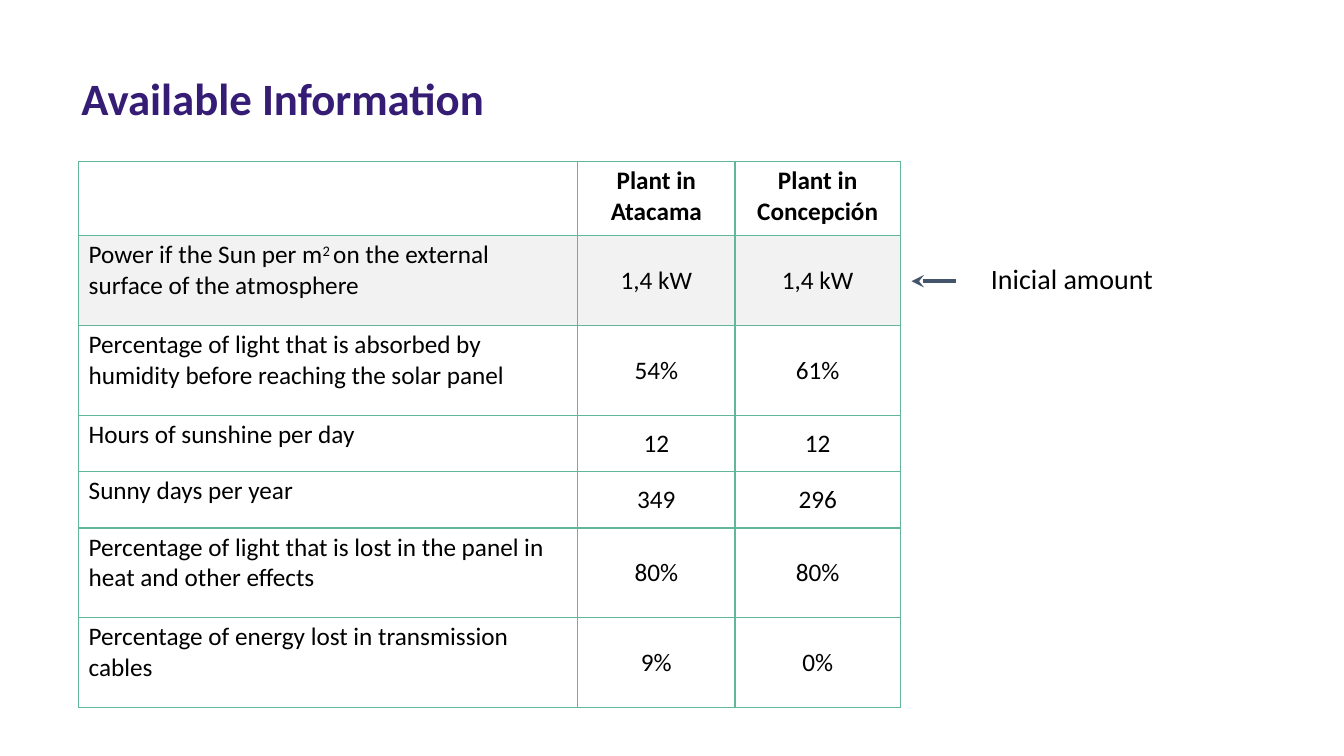
import lxml.etree
import pptx
import pptx.dml.color
import pptx.enum.shapes
import pptx.enum.text
import pptx.oxml.ns
import pptx.util

RGBColor = pptx.dml.color.RGBColor
PURPLE = RGBColor(0x35, 0x1C, 0x75)
BLACK = RGBColor(0x00, 0x00, 0x00)
GREEN = RGBColor(0x62, 0xB7, 0x99)
GREY = RGBColor(0xF2, 0xF2, 0xF2)
SLATE = RGBColor(0x44, 0x54, 0x6A)

EMU_PER_PX = 9144
COLUMNS = [495, 156, 164]
ROWS = [
    (74, [], "Plant in Atacama", "Plant in Concepción"),
    (89, ["Power if the Sun per m", "2 ", "on the external surface of the atmosphere"], "1,4 kW", "1,4 kW"),
    (89, ["Percentage of light that is absorbed by humidity before reaching the solar panel"], "54%", "61%"),
    (56, ["Hours of sunshine per day"], "12", "12"),
    (56, ["Sunny days per year"], "349", "296"),
    (89, ["Percentage of light that is lost in the panel in heat and other effects"], "80%", "80%"),
    (89, ["Percentage of energy lost in transmission cables"], "9%", "0%"),
]


def px(length):
    return pptx.util.Emu(length * EMU_PER_PX)


def add_xml(parent, tag, **attributes):
    return lxml.etree.SubElement(parent, pptx.oxml.ns.qn(tag), attributes)


class SlideBuilder:
    """Draws styled elements on the current slide."""

    def __init__(self, slide, font="Calibri"):
        self.shapes = slide.shapes
        self.font = font

    def style(self, paragraph, size, color=BLACK, bold=False):
        paragraph.font.name = self.font
        paragraph.font.size = pptx.util.Pt(size)
        paragraph.font.color.rgb = color
        paragraph.font.bold = bold

    def text(self, words, left, top, width, height, size, color=BLACK, bold=False):
        frame = self.shapes.add_textbox(px(left), px(top), px(width), px(height)).text_frame
        frame.word_wrap = True
        frame.auto_size = pptx.enum.text.MSO_AUTO_SIZE.SHAPE_TO_FIT_TEXT
        frame.text = words
        self.style(frame.paragraphs[0], size, color, bold)

    def cell(self, cell, parts, header=False, centred=False, fill=None):
        cell.margin_left = cell.margin_right = px(10)
        cell.margin_top = cell.margin_bottom = px(4)
        paragraph = cell.text_frame.paragraphs[0]
        if centred:
            paragraph.alignment = pptx.enum.text.PP_ALIGN.CENTER
            if not header:
                cell.vertical_anchor = pptx.enum.text.MSO_ANCHOR.MIDDLE
        self.style(paragraph, 18, bold=header)
        for part in parts:
            run = paragraph.add_run()
            run.text = part
            if part == "2 ":
                run._r.get_or_add_rPr().set("baseline", "30000")
        properties = cell._tc.get_or_add_tcPr()
        for side in ("a:lnL", "a:lnR", "a:lnT", "a:lnB"):
            border = add_xml(properties, side, w=str(pptx.util.Pt(1)))
            add_xml(add_xml(border, "a:solidFill"), "a:srgbClr", val=str(GREEN))
        if fill is None:
            cell.fill.background()
        else:
            cell.fill.solid()
            cell.fill.fore_color.rgb = fill

    def table(self, rows, columns, left, top, shaded_row):
        height = sum(row[0] for row in rows)
        table = self.shapes.add_table(
            len(rows), len(columns), px(left), px(top), px(sum(columns)), px(height)).table
        table.first_row = table.horz_banding = False
        for column, width in zip(table.columns, columns):
            column.width = px(width)
        for index, (row_height, label, *values) in enumerate(rows):
            table.rows[index].height = px(row_height)
            fill = GREY if index == shaded_row else None
            self.cell(table.cell(index, 0), label, fill=fill)
            for column, value in enumerate(values, start=1):
                self.cell(table.cell(index, column), [value], index == 0, True, fill)

    def arrow(self, start, end, y):
        arrow = self.shapes.add_connector(
            pptx.enum.shapes.MSO_CONNECTOR.STRAIGHT, px(start), px(y), px(end), px(y))
        arrow.line.color.rgb = SLATE
        arrow.line.width = pptx.util.Pt(3)
        add_xml(arrow.line._get_or_add_ln(), "a:tailEnd", type="stealth")
        add_xml(arrow._element.spPr, "a:effectLst")


def main():
    presentation = pptx.Presentation()
    presentation.slide_width = px(1333)
    presentation.slide_height = px(750)
    builder = SlideBuilder(presentation.slides.add_slide(presentation.slide_layouts[6]))
    builder.text("Available Information", 71, 65, 859, 64, 32, PURPLE, bold=True)
    builder.table(ROWS, COLUMNS, 78, 160, shaded_row=1)
    builder.text("Inicial amount", 973, 255, 315, 44, 20)
    builder.arrow(948, 904, 279)
    presentation.save("out.pptx")


if __name__ == "__main__":
    main()
